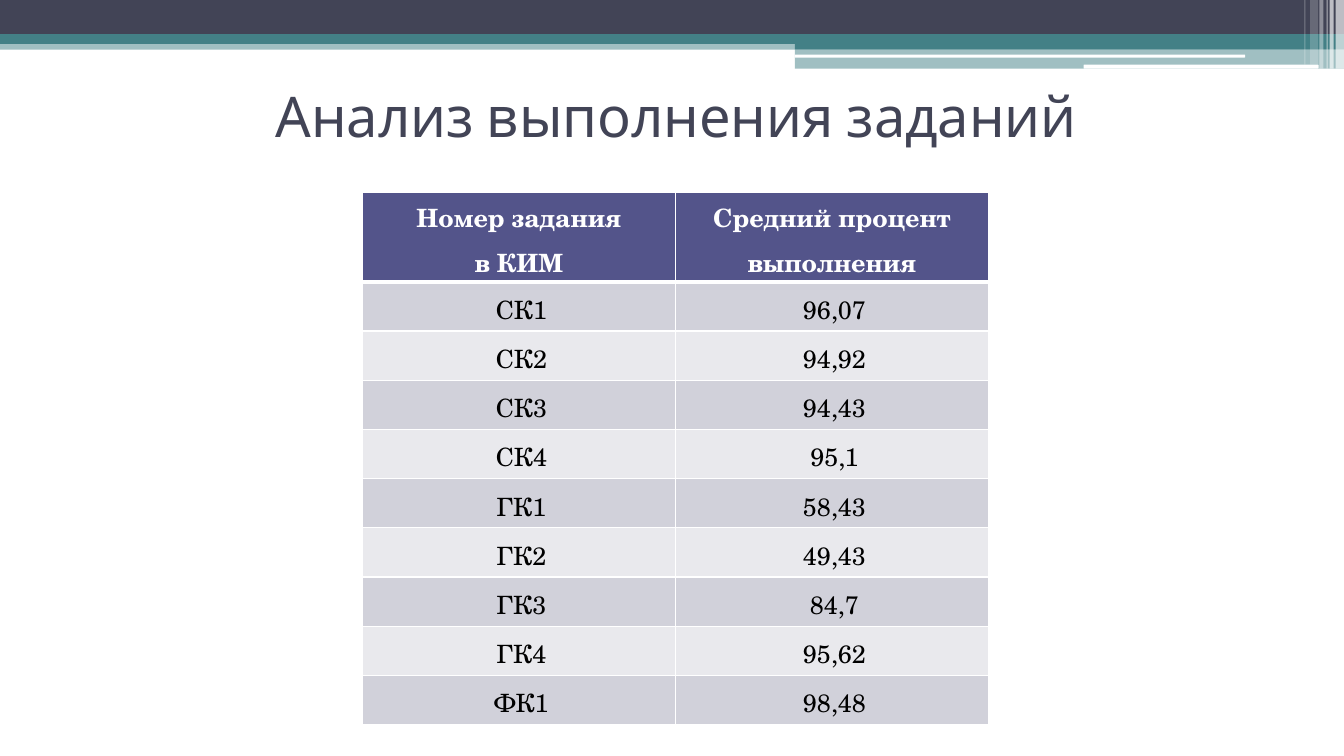
import pptx
import pptx.util
import pptx.dml.color
import pptx.enum.shapes
import pptx.enum.text
import pptx.oxml
import pptx.oxml.ns
from pptx.util import Cm

# Content
TITLE = "Анализ выполнения заданий"
HEADERS = [["Номер задания", "в КИМ"], ["Средний процент выполнения"]]
RESULTS = [
    ("СК1", "96,07"),
    ("СК2", "94,92"),
    ("СК3", "94,43"),
    ("СК4", "95,1"),
    ("ГК1", "58,43"),
    ("ГК2", "49,43"),
    ("ГК3", "84,7"),
    ("ГК4", "95,62"),
    ("ФК1", "98,48"),
]
COLORS = {
    "dark": "424456",
    "teal": "438086",
    "white": "FFFFFF",
    "black": "000000",
    "header": "53548A",
    "odd": "D1D1DA",
    "even": "E9E9ED",
}
TITLE_FONT, TABLE_FONT = "Karla", "TeX Gyre Schola"

# Decoration: left, top, width, height in cm, colour, opacity in percent
WIDTH, HEIGHT = 33.87, 19.05
SPLIT = 20.03
BANDS = [
    (0, 1.02, WIDTH, 0.23, "teal", 50),
    (0, 0, WIDTH, 0.86, "dark", 100),
    (0, 0.86, WIDTH, 0.25, "teal", 100),
    (SPLIT, 0.99, WIDTH - SPLIT, 0.25, "teal", 100),
    (SPLIT, 1.23, WIDTH - SPLIT, 0.5, "teal", 50),
]
ROUNDED_LINES = [
    (SPLIT, 1.38, 11.35, 0.07, "white", 100),
    (27.31, 1.63, 5.92, 0.1, "white", 100),
]
# Vertical stripes: left, width, height, opacity
STRIPES = [
    (33.66, 0.21, 1.73, 65),
    (33.51, 0.1, 1.73, 65),
    (33.43, 0.03, 1.73, 60),
    (33.25, 0.1, 1.73, 40),
    (33.02, 0.2, 1.63, 20),
    (32.87, 0.03, 1.63, 30),
]

# Table geometry in cm
TABLE_LEFT, TABLE_TOP = 9.13, 4.84
COLUMN_WIDTH, HEADER_HEIGHT, ROW_HEIGHT = 7.89, 2.22, 1.24


def rgb(name):
    return pptx.dml.color.RGBColor.from_string(COLORS[name])


def add_block(slide, kind, left, top, width, height, color, opacity):
    shape = slide.shapes.add_shape(kind, Cm(left), Cm(top), Cm(width), Cm(height))
    shape.shadow.inherit = False
    shape.line.fill.background()
    shape.fill.solid()
    shape.fill.fore_color.rgb = rgb(color)
    if opacity < 100:
        color_element = shape.fill._xPr.find(".//" + pptx.oxml.ns.qn("a:srgbClr"))
        color_element.append(pptx.oxml.parse_xml(
            f'<a:alpha {pptx.oxml.ns.nsdecls("a")} val="{opacity * 1000}"/>'))


def format_run(run, font, size, color, bold=False):
    run.font.name = font
    run.font.size = pptx.util.Pt(size)
    run.font.bold = bold
    run.font.color.rgb = rgb(color)


def set_borders(cell, bottom_points):
    properties = cell._tc.get_or_add_tcPr()
    sides = {"lnL": 1, "lnR": 1, "lnT": 1, "lnB": bottom_points}
    for position, (side, points) in enumerate(sides.items()):
        properties.insert(position, pptx.oxml.parse_xml(
            f'<a:{side} {pptx.oxml.ns.nsdecls("a")} w="{pptx.util.Pt(points)}">'
            f'<a:solidFill><a:srgbClr val="{COLORS["white"]}"/></a:solidFill></a:{side}>'))


def fill_cell(cell, lines, fill, color, is_header):
    cell.margin_left = cell.margin_right = Cm(0.18)
    cell.margin_top = cell.margin_bottom = 0
    cell.vertical_anchor = pptx.enum.text.MSO_ANCHOR.MIDDLE
    cell.fill.solid()
    cell.fill.fore_color.rgb = rgb(fill)
    set_borders(cell, 3 if is_header else 1)
    paragraph = cell.text_frame.paragraphs[0]
    paragraph.alignment = pptx.enum.text.PP_ALIGN.CENTER
    paragraph.line_spacing = 1.15
    if not is_header:
        paragraph._p.get_or_add_pPr().set("indent", str(Cm(0.13)))
    for index, line in enumerate(lines):
        if index:
            paragraph.add_line_break()
        run = paragraph.add_run()
        run.text = line
        format_run(run, TABLE_FONT, 18, color, bold=is_header)


def add_decoration(slide):
    kinds = pptx.enum.shapes.MSO_SHAPE
    for band in BANDS:
        add_block(slide, kinds.RECTANGLE, *band)
    for line in ROUNDED_LINES:
        add_block(slide, kinds.ROUNDED_RECTANGLE, *line)
    for left, width, height, opacity in STRIPES:
        add_block(slide, kinds.RECTANGLE, left, 0, width, height, "white", opacity)


def add_title(slide):
    title = slide.shapes.title
    title.left, title.top, title.width, title.height = Cm(1.8), Cm(1.42), Cm(30.48), Cm(2.97)
    title.text_frame.vertical_anchor = pptx.enum.text.MSO_ANCHOR.MIDDLE
    paragraph = title.text_frame.paragraphs[0]
    paragraph.alignment = pptx.enum.text.PP_ALIGN.CENTER
    run = paragraph.add_run()
    run.text = TITLE
    format_run(run, TITLE_FONT, 40, "dark")


def add_results(slide):
    table = slide.shapes.add_table(
        len(RESULTS) + 1, len(HEADERS), Cm(TABLE_LEFT), Cm(TABLE_TOP),
        Cm(COLUMN_WIDTH * len(HEADERS)),
        Cm(HEADER_HEIGHT + ROW_HEIGHT * len(RESULTS))).table
    for column in table.columns:
        column.width = Cm(COLUMN_WIDTH)
    for index, row in enumerate(table.rows):
        row.height = Cm(ROW_HEIGHT if index else HEADER_HEIGHT)
    for column, lines in enumerate(HEADERS):
        fill_cell(table.cell(0, column), lines, "header", "white", True)
    for row, values in enumerate(RESULTS, start=1):
        for column, value in enumerate(values):
            fill = "odd" if row % 2 else "even"
            fill_cell(table.cell(row, column), [value], fill, "black", False)


def main():
    presentation = pptx.Presentation()
    presentation.slide_width, presentation.slide_height = Cm(WIDTH), Cm(HEIGHT)
    slide = presentation.slides.add_slide(presentation.slide_layouts[5])
    add_decoration(slide)
    add_title(slide)
    add_results(slide)
    presentation.save("out.pptx")


if __name__ == "__main__":
    main()
